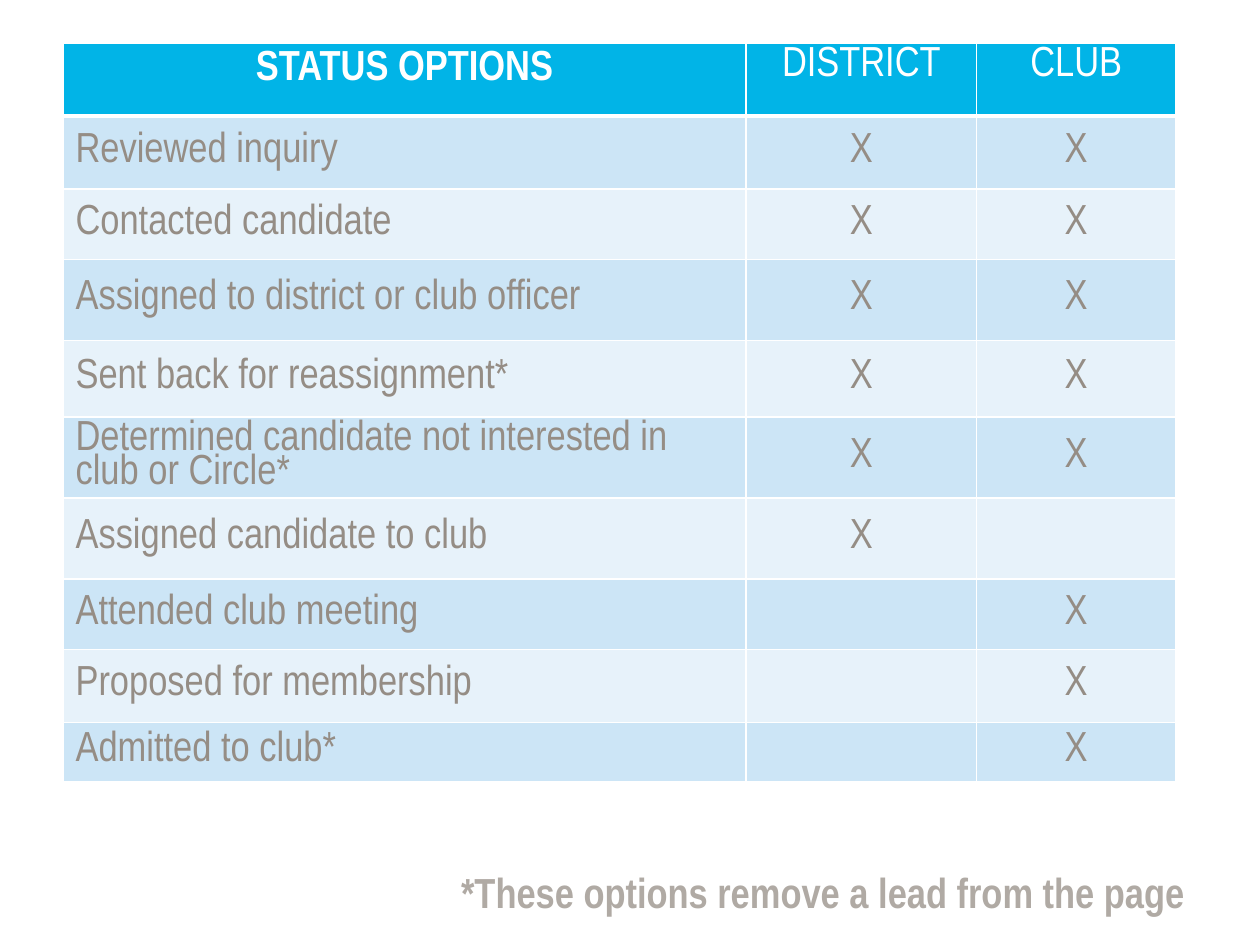
from lxml import etree
from pptx import Presentation
from pptx import util as u
from pptx.dml.color import RGBColor
from pptx.enum import shapes, text
from pptx.oxml.ns import qn

WHITE = RGBColor(0xFF, 0xFF, 0xFF)
HEADER_BLUE = RGBColor(0x01, 0xB4, 0xE7)
BANDS = [RGBColor(0xCC, 0xE5, 0xF6), RGBColor(0xE7, 0xF2, 0xFA)]
BODY_GREY = RGBColor(0x95, 0x8D, 0x85)
NOTE_GREY = RGBColor(0xB0, 0xAA, 0xA4)

HEADINGS = ["STATUS OPTIONS", "DISTRICT", "CLUB"]
STATUSES = [
    ("Reviewed inquiry", "X", "X"),
    ("Contacted candidate", "X", "X"),
    ("Assigned to district or club officer", "X", "X"),
    ("Sent back for reassignment*", "X", "X"),
    ("Determined candidate not interested in club or Circle*", "X", "X"),
    ("Assigned candidate to club", "X", ""),
    ("Attended club meeting", "", "X"),
    ("Proposed for membership", "", "X"),
    ("Admitted to club*", "", "X"),
]
COLUMN_WIDTHS = [13.77, 4.65, 4.01]
ROW_HEIGHTS = [1.47, 1.47, 1.42, 1.63, 1.55, 1.63, 1.63, 1.42, 1.47, 1.19]
TIGHT = 0.85


def write(frame, wording, color, bold=False, **paragraph_format):
    paragraph = frame.paragraphs[0]
    for name, value in paragraph_format.items():
        setattr(paragraph, name, value)
    run = paragraph.add_run()
    run.text = wording
    font_format = {"name": "Arial Narrow", "size": u.Pt(24), "bold": bold}
    for name, value in font_format.items():
        setattr(run.font, name, value)
    run.font.color.rgb = color


def fill_cell(cell, color):
    cell.fill.solid()
    cell.fill.fore_color.rgb = color


def border_header(cell):
    """White rules around a heading, heavier below; they precede the fill in XML."""
    properties = cell._tc.get_or_add_tcPr()
    for position, (side, points) in enumerate(
            [("lnL", 1), ("lnR", 1), ("lnT", 1), ("lnB", 3)]):
        line = etree.Element(qn("a:" + side), w=str(u.Pt(points)))
        solid = etree.SubElement(line, qn("a:solidFill"))
        etree.SubElement(solid, qn("a:srgbClr"), val=str(WHITE))
        properties.insert(position, line)


def add_status_table(slide, left, top):
    table = slide.shapes.add_table(
        len(STATUSES) + 1, len(HEADINGS), u.Cm(left), u.Cm(top),
        u.Cm(sum(COLUMN_WIDTHS)), u.Cm(sum(ROW_HEIGHTS))).table
    for column, width in zip(table.columns, COLUMN_WIDTHS):
        column.width = u.Cm(width)
    for row, height in zip(table.rows, ROW_HEIGHTS):
        row.height = u.Cm(height)

    for column, heading in enumerate(HEADINGS):
        cell = table.cell(0, column)
        fill_cell(cell, HEADER_BLUE)
        border_header(cell)
        write(cell.text_frame, heading, WHITE, bold=column == 0,
              alignment=text.PP_ALIGN.CENTER,
              line_spacing=TIGHT if column else 1.0)

    for row, status in enumerate(STATUSES, start=1):
        for column, entry in enumerate(status):
            cell = table.cell(row, column)
            fill_cell(cell, BANDS[(row - 1) % 2])
            cell.vertical_anchor = text.MSO_ANCHOR.MIDDLE
            if entry:
                write(cell.text_frame, entry, BODY_GREY, line_spacing=TIGHT,
                      alignment=text.PP_ALIGN.CENTER if column else text.PP_ALIGN.LEFT)


def add_footnote(slide, left, top, width, height):
    footnote = slide.shapes.add_shape(
        shapes.MSO_SHAPE.RECTANGLE, *map(u.Cm, (left, top, width, height)))
    footnote.shadow.inherit = False
    footnote.fill.solid()
    footnote.fill.fore_color.rgb = WHITE
    footnote.line.fill.background()
    frame = footnote.text_frame
    frame_format = {"word_wrap": True, "vertical_anchor": text.MSO_ANCHOR.TOP,
                    "auto_size": text.MSO_AUTO_SIZE.SHAPE_TO_FIT_TEXT}
    for name, value in frame_format.items():
        setattr(frame, name, value)
    write(frame, "*These options remove a lead from the page", NOTE_GREY,
          bold=True, alignment=text.PP_ALIGN.RIGHT)


def main():
    deck = Presentation()
    deck.slide_width, deck.slide_height = u.Cm(25.4), u.Cm(19.05)
    slide = deck.slides.add_slide(deck.slide_layouts[6])
    add_status_table(slide, 1.27, 0.87)
    add_footnote(slide, 5.92, 17.35, 18.21, 1.27)
    deck.save("out.pptx")


if __name__ == "__main__":
    main()
